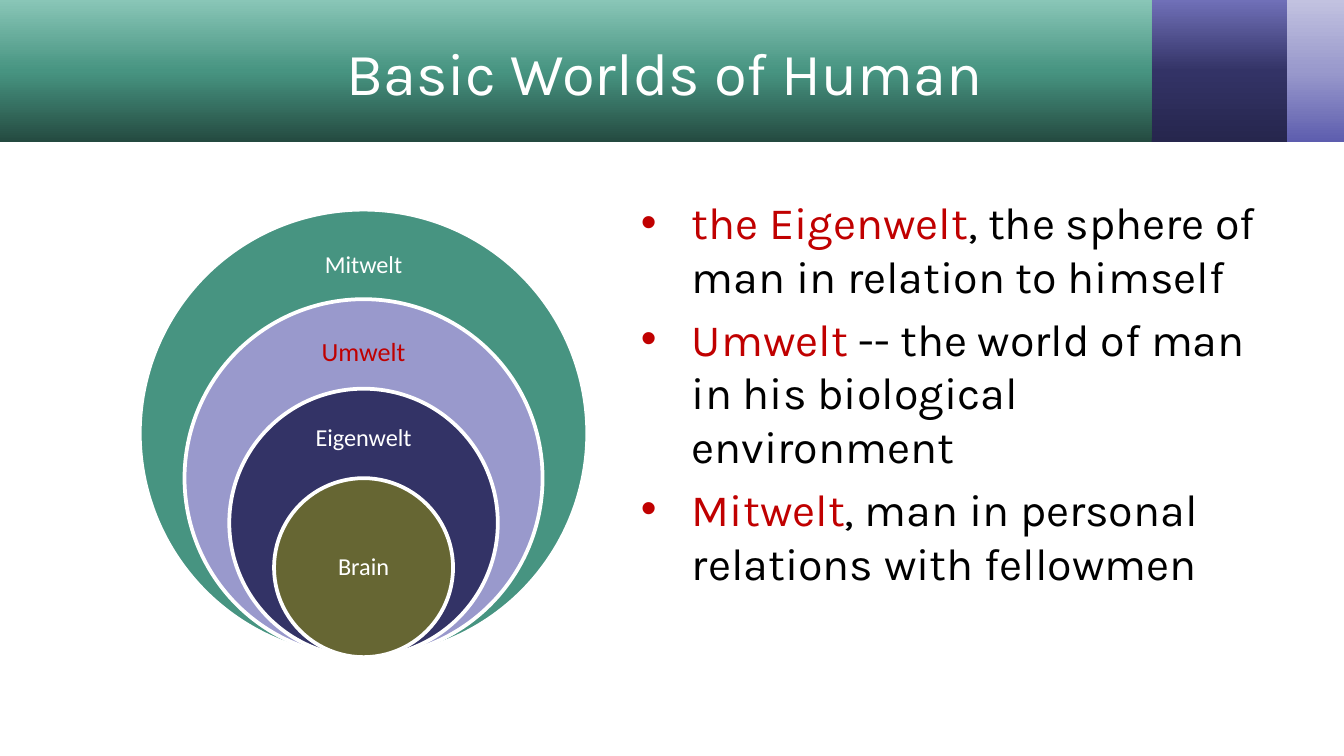
from copy import deepcopy
from dataclasses import dataclass

from lxml import etree
from pptx import Presentation
from pptx.dml.color import RGBColor
from pptx.enum.shapes import MSO_SHAPE
from pptx.enum.text import MSO_ANCHOR, PP_ALIGN
from pptx.oxml.ns import qn
from pptx.util import Inches, Pt

RECTANGLE = MSO_SHAPE.RECTANGLE
OVAL = MSO_SHAPE.OVAL
MIDDLE = MSO_ANCHOR.MIDDLE
TOP = MSO_ANCHOR.TOP
CENTER = PP_ALIGN.CENTER


@dataclass(frozen=True)
class Theme:
    white: str = "FFFFFF"
    black: str = "000000"
    accent: str = "C00000"
    green: str = "479481"
    lilac: str = "9999CC"
    navy: str = "333366"
    olive: str = "666633"
    green_band: tuple = ("244A40", "479481", "89C6B7")
    navy_band: tuple = ("26264D", "333366", "7070B8")
    lilac_band: tuple = ("5D5DAE", "9999CC", "C2C2E0")
    text_font: str = "Karla"
    label_font: str = "Calibri"
    title_size: int = 32
    body_size: int = 24
    label_size: int = 13
    label_large: int = 14


THEME = Theme()


def style_font(font, name, size, color):
    font.name = name
    font.size = Pt(size)
    font.color.rgb = RGBColor.from_string(color)


def add_plain_shape(page, kind, left, top, width, height):
    shape = page.shapes.add_shape(
        kind, Inches(left), Inches(top), Inches(width), Inches(height))
    shape.shadow.inherit = False
    return shape


def add_text_box(page, left, top, width, height, anchor):
    box = page.shapes.add_textbox(
        Inches(left), Inches(top), Inches(width), Inches(height))
    frame = box.text_frame
    frame.word_wrap = True
    frame.vertical_anchor = anchor
    return frame


def fill_band(shape, colors):
    shape.line.fill.background()
    shape.fill.gradient()
    shape.fill.gradient_angle = 90
    stop_list = next(shape.element.iter(qn("a:gsLst")))
    stop_list.append(deepcopy(stop_list[-1]))
    for stop, color, position in zip(shape.fill.gradient_stops, colors, (0, 0.5, 1)):
        stop.color.rgb = RGBColor.from_string(color)
        stop.position = position


def add_header(page, left, top, width, height):
    bands = (
        (9.43, 0.58, THEME.lilac_band),
        (8.53, 1.05, THEME.navy_band),
        (0, 8.57, THEME.green_band),
    )
    for offset, band_width, colors in bands:
        band = add_plain_shape(page, RECTANGLE, left + offset, top, band_width, height)
        fill_band(band, colors)
    frame = add_text_box(page, left + 0.5, top + 0.06, width - 1, 0.94, MIDDLE)
    frame.text = "Basic Worlds of Human "
    para = frame.paragraphs[0]
    para.alignment = CENTER
    style_font(para.runs[0].font, THEME.text_font, THEME.title_size, THEME.white)


def add_nested_worlds(page, left, top, size):
    label_width = 0.93
    worlds = (
        ("Mitwelt", THEME.green, THEME.white, THEME.label_size, 0.17, 0.5),
        ("Umwelt", THEME.lilac, THEME.accent, THEME.label_large, 0.16, 0.48),
        ("Eigenwelt", THEME.navy, THEME.white, THEME.label_size, 0.15, 0.45),
        ("Brain", THEME.olive, THEME.white, THEME.label_size, 0.33, 0.67),
    )
    for level, (name, fill, color, text_size, drop, label_height) in enumerate(worlds):
        diameter = size * (1 - 0.2 * level)
        circle_top = top + size - diameter
        circle = add_plain_shape(
            page, OVAL, left + (size - diameter) / 2, circle_top, diameter, diameter)
        circle.fill.solid()
        circle.fill.fore_color.rgb = RGBColor.from_string(fill)
        circle.line.color.rgb = RGBColor.from_string(THEME.white)
        circle.line.width = Pt(2)
        frame = add_text_box(
            page, left + (size - label_width) / 2, circle_top + drop,
            label_width, label_height, MIDDLE)
        frame.margin_left = frame.margin_right = Inches(0.1)
        frame.margin_top = frame.margin_bottom = Inches(0.1)
        frame.text = name
        para = frame.paragraphs[0]
        para.alignment = CENTER
        para.line_spacing = 0.9
        style_font(para.runs[0].font, THEME.label_font, text_size, color)


def add_bullet(para):
    properties = para._p.get_or_add_pPr()
    indent = Inches(0.38)
    properties.set("marL", str(indent))
    properties.set("indent", str(-indent))
    etree.SubElement(properties, qn("a:buFont")).set("typeface", "Arial")
    etree.SubElement(properties, qn("a:buChar")).set("char", "•")


def add_definitions(page, left, top, width, height):
    definitions = (
        ("the Eigenwelt", ", the sphere of man in relation to himself"),
        ("Umwelt", " -- the world of man in his biological environment"),
        ("Mitwelt", ", man in personal relations with fellowmen"),
    )
    frame = add_text_box(page, left, top, width, height, TOP)
    for index, parts in enumerate(definitions):
        para = frame.add_paragraph() if index else frame.paragraphs[0]
        add_bullet(para)
        if index:
            para.space_before = Pt(0.2 * THEME.body_size)
        for text, color in zip(parts, (THEME.accent, THEME.black)):
            span = para.add_run()
            span.text = text
            style_font(span.font, THEME.text_font, THEME.body_size, color)


def main():
    deck = Presentation()
    deck.slide_width = Inches(10)
    deck.slide_height = deck.slide_width * 9 // 16
    page = deck.slides.add_slide(deck.slide_layouts[6])
    add_header(page, 0, 0, 10, 1.06)
    add_nested_worlds(page, 1.04, 1.56, 3.33)
    add_definitions(page, 4.67, 1.4, 4.83, 3.92)
    deck.save("out.pptx")


if __name__ == "__main__":
    main()
